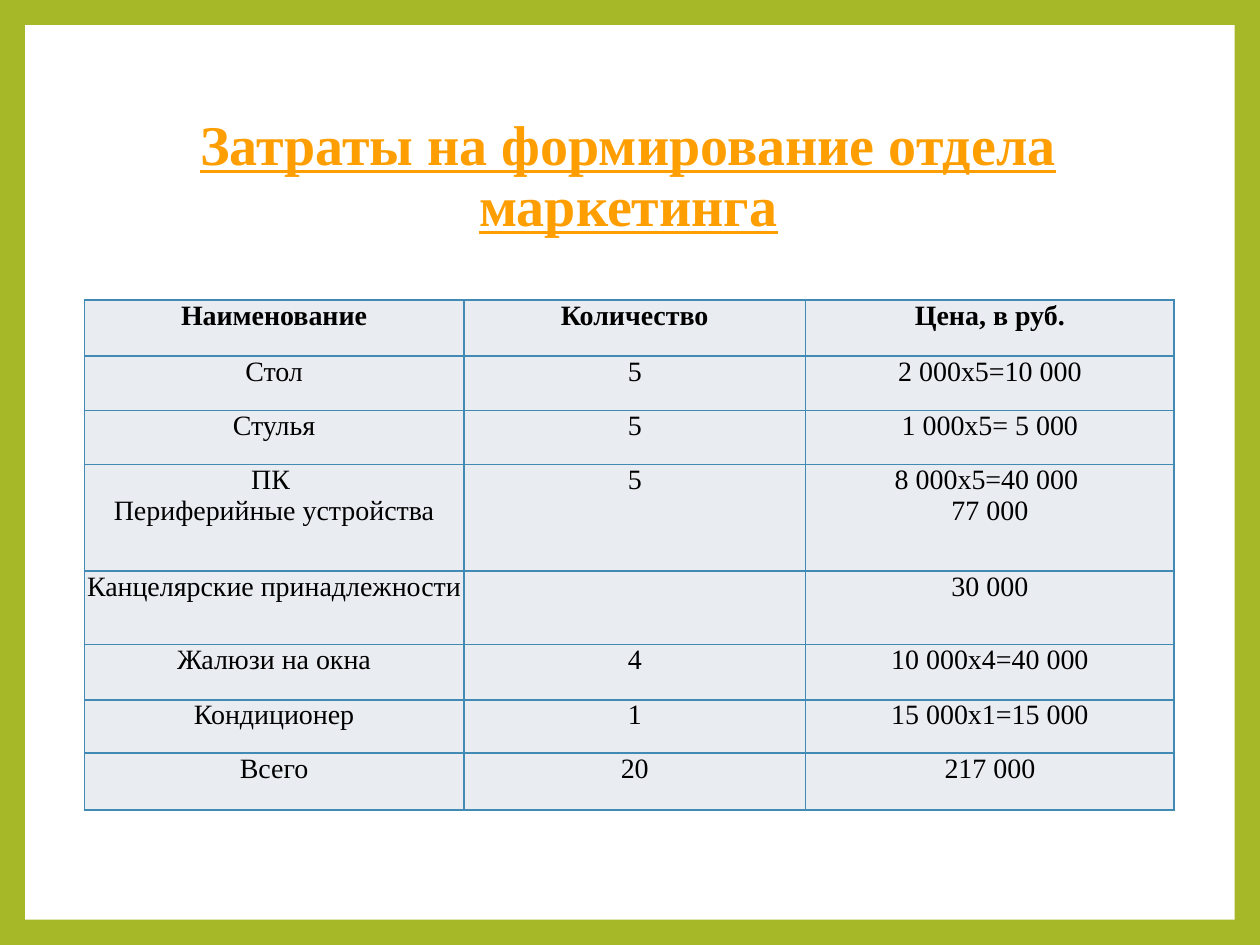
from dataclasses import dataclass

from lxml import etree
from pptx import Presentation
from pptx.dml.color import RGBColor
from pptx.enum import shapes, text
from pptx.oxml import ns
from pptx.util import Pt


@dataclass(frozen=True)
class Theme:
    frame: str = "A6B727"
    paper: str = "FFFFFF"
    title: str = "FE9E00"
    ink: str = "000000"
    cell: str = "E9EDF2"
    rule: str = "418AB3"
    font: str = "Times New Roman"
    head: int = 32
    body: int = 16


THEME = Theme()
WIDTH, HEIGHT = 720, 540
MARGIN = 14.4
COLS = (216.9, 195.3, 210.6)
ROWS = (32, 31, 31, 61, 42, 31.5, 30.5, 32.5)
COSTS = (
    ("Наименование", "Количество", "Цена, в руб."),
    ("Стол", "5", "2 000х5=10 000"),
    ("Стулья", "5", "1 000х5= 5 000"),
    ("ПК \nПериферийные устройства", "5", "8 000х5=40\u00a0000 \n77 000"),
    ("Канцелярские принадлежности", "", "30 000"),
    ("Жалюзи на окна", "4", "10 000х4=40 000"),
    ("Кондиционер", "1", "15 000х1=15 000"),
    ("Всего", "20", "217 000"),
)


def paint(fill, color):
    fill.solid()
    fill.fore_color.rgb = RGBColor.from_string(color)


def style(para, size, color, bold):
    para.alignment = text.PP_ALIGN.CENTER
    font = para.font
    font.name, font.size, font.bold = THEME.font, Pt(size), bold
    font.color.rgb = RGBColor.from_string(color)


def add_frame(slide, box):
    """Colour the slide and lay the white sheet over it."""
    paint(slide.background.fill, THEME.frame)
    sheet = slide.shapes.add_shape(shapes.MSO_SHAPE.RECTANGLE, *map(Pt, box))
    sheet.shadow.inherit = False
    paint(sheet.fill, THEME.paper)
    sheet.line.fill.background()


def add_title(slide, box, words):
    frame = slide.shapes.add_textbox(*map(Pt, box)).text_frame
    frame.word_wrap = True
    frame.vertical_anchor = text.MSO_ANCHOR.MIDDLE
    para = frame.paragraphs[0]
    para.text = words
    para.line_spacing = 0.9
    style(para, THEME.head, THEME.title, True)
    para.font.underline = True


def add_rules(cell):
    """Draw a thin line on all four sides of the cell."""
    props = cell._tc.get_or_add_tcPr()
    for place, side in enumerate(("lnL", "lnR", "lnT", "lnB")):
        line = etree.Element(ns.qn(f"a:{side}"), w=str(Pt(1)))
        fill = etree.SubElement(line, ns.qn("a:solidFill"))
        etree.SubElement(fill, ns.qn("a:srgbClr"), val=THEME.rule)
        props.insert(place, line)


def fill_cell(cell, words, bold):
    cell.text = words
    cell.margin_left = cell.margin_right = Pt(0.75)
    cell.margin_top = cell.margin_bottom = 0
    paint(cell.fill, THEME.cell)
    add_rules(cell)
    for para in cell.text_frame.paragraphs:
        style(para, THEME.body, THEME.ink, bold)


def add_costs(slide, left, top):
    box = map(Pt, (left, top, sum(COLS), sum(ROWS)))
    table = slide.shapes.add_table(len(ROWS), len(COLS), *box).table
    for col, width in zip(table.columns, COLS):
        col.width = Pt(width)
    for row, height, words in zip(table.rows, ROWS, COSTS):
        row.height = Pt(height)
        for cell, word in zip(row.cells, words):
            fill_cell(cell, word, words is COSTS[0])


def main():
    deck = Presentation()
    deck.slide_width, deck.slide_height = Pt(WIDTH), Pt(HEIGHT)
    slide = deck.slides.add_slide(deck.slide_layouts[6])
    add_frame(slide, (MARGIN, MARGIN, WIDTH - 2 * MARGIN, HEIGHT - 2 * MARGIN))
    add_title(slide, (67.5, 48.2, 583.2, 106.6),
              "Затраты на формирование отдела маркетинга")
    add_costs(slide, 48.2, 171.5)
    deck.save("out.pptx")


if __name__ == "__main__":
    main()
